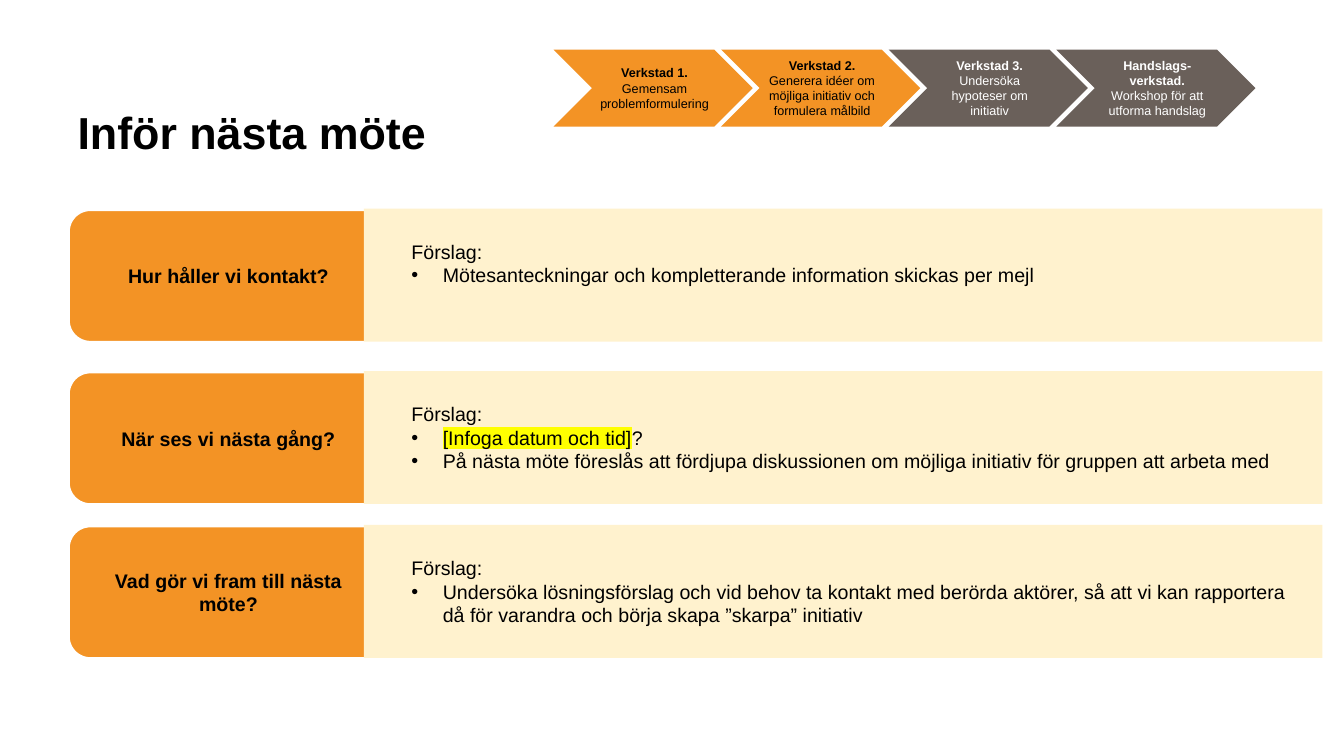
"""Build the slide that prepares the group for its next meeting."""
from dataclasses import dataclass

from lxml import etree
from pptx import Presentation
from pptx import util as u
from pptx.dml.color import RGBColor
from pptx.enum import shapes, text
from pptx.oxml import ns


@dataclass(frozen=True)
class Theme:
    """Colours, font and type sizes of the slide."""
    font: str = "Arial"
    orange: str = "F39325"
    grey: str = "6A605A"
    cream: str = "FFF2CE"
    black: str = "000000"
    white: str = "FFFFFF"
    marker: str = "FFFF00"
    title: int = 32
    body: int = 14
    step: int = 9


THEME = Theme()
STEPS = [
    ("Verkstad 1. ", "Gemensam problemformulering", True),
    ("Verkstad 2. ", "Generera idéer om möjliga initiativ och formulera målbild", True),
    ("Verkstad 3. ", "Undersöka hypoteser om initiativ", False),
    ("Handslags-verkstad. ", "Workshop för att utforma handslag", False),
]
ROWS = [
    (5.26, "Hur håller vi kontakt?", 0.72,
     [[("Mötesanteckningar och kompletterande information skickas per mejl", False)]]),
    (9.35, "När ses vi nästa gång?", 0.13,
     [[("[Infoga datum och tid]", True), ("?", False)],
      [("På nästa möte föreslås att fördjupa diskussionen om möjliga initiativ "
        "för gruppen att arbeta med", False)]]),
    (13.23, "Vad gör vi fram till nästa möte?", 0.13,
     [[("Undersöka lösningsförslag och vid behov ta kontakt med berörda aktörer, "
        "så att vi kan rapportera då för varandra och börja skapa ”skarpa” initiativ",
        False)]]),
]


def set_font(paragraph, size, color=THEME.black, bold=False):
    """Give a whole paragraph its font."""
    font = paragraph.font
    font.name, font.size, font.bold = THEME.font, u.Pt(size), bold
    font.color.rgb = RGBColor.from_string(color)


def add_block(slide, preset, box, fill, line=None, line_width=0):
    """Add a flat filled shape with middle-anchored, wrapping text."""
    block = slide.shapes.add_shape(preset, *(u.Cm(length) for length in box))
    block.shadow.inherit = False
    block.fill.solid()
    block.fill.fore_color.rgb = RGBColor.from_string(fill)
    if line:
        block.line.color.rgb = RGBColor.from_string(line)
        block.line.width = u.Pt(line_width)
    else:
        block.line.fill.background()
    block.text_frame.word_wrap = True
    block.text_frame.vertical_anchor = text.MSO_ANCHOR.MIDDLE
    return block


def set_bullet(paragraph):
    """Give a paragraph a hanging round bullet."""
    properties = paragraph._p.get_or_add_pPr()
    properties.set("marL", str(u.Cm(0.79)))
    properties.set("indent", str(u.Cm(-0.79)))
    etree.SubElement(properties, ns.qn("a:buFont"), typeface=THEME.font)
    etree.SubElement(properties, ns.qn("a:buChar"), char="•")


def mark(run):
    """Highlight a run with the marker colour."""
    highlight = etree.SubElement(run.font._element, ns.qn("a:highlight"))
    etree.SubElement(highlight, ns.qn("a:srgbClr"), val=THEME.marker)


def add_title(slide, box, wording):
    """Place and format the title placeholder."""
    title = slide.shapes.title
    title.left, title.top, title.width, title.height = (u.Cm(length) for length in box)
    frame = title.text_frame
    frame.text = wording
    frame.auto_size = text.MSO_AUTO_SIZE.NONE
    frame.vertical_anchor = text.MSO_ANCHOR.BOTTOM
    heading = frame.paragraphs[0]
    heading.alignment = text.PP_ALIGN.LEFT
    heading.line_spacing = 0.95
    set_font(heading, THEME.title, bold=True)


def add_process(slide, box, steps):
    """Fill the box with overlapping chevrons, one for each workshop."""
    left, top, width, height = box
    chevron_width = 4.75
    pitch = (width - chevron_width) / (len(steps) - 1)
    for index, (name, task, reached) in enumerate(steps):
        fill = THEME.orange if reached else THEME.grey
        chevron = add_block(slide, shapes.MSO_SHAPE.CHEVRON,
                            (left + index * pitch, top, chevron_width, height),
                            fill, fill, 4)
        etree.SubElement(chevron.line._get_or_add_ln(), ns.qn("a:miter"), lim="800000")
        frame = chevron.text_frame
        frame.margin_left = frame.margin_right = u.Cm(0.1)
        caption = frame.paragraphs[0]
        caption.alignment = text.PP_ALIGN.CENTER
        set_font(caption, THEME.step, THEME.black if reached else THEME.white)
        name_run = caption.add_run()
        name_run.text = name
        name_run.font.bold = True
        caption.add_run().text = task


def add_question(slide, box, question, bottom_margin, proposals):
    """Place a question label with its panel of proposals in the box."""
    left, top, width, height = box
    label_width, panel_offset = 8.08, 7.45
    label = add_block(slide, shapes.MSO_SHAPE.ROUNDED_RECTANGLE,
                      (left, top + 0.02, label_width, height),
                      THEME.orange, THEME.white, 2.25)
    label.text_frame.text = question
    wording = label.text_frame.paragraphs[0]
    wording.alignment = text.PP_ALIGN.CENTER
    set_font(wording, THEME.body, bold=True)

    panel = add_block(slide, shapes.MSO_SHAPE.RECTANGLE,
                      (left + panel_offset, top, width - panel_offset, height),
                      THEME.cream)
    frame = panel.text_frame
    frame.margin_left, frame.margin_bottom = u.Cm(1.2), u.Cm(bottom_margin)
    frame.text = "Förslag:"
    intro = frame.paragraphs[0]
    intro.alignment = text.PP_ALIGN.LEFT
    set_font(intro, THEME.body)
    for proposal in proposals:
        item = frame.add_paragraph()
        item.alignment = text.PP_ALIGN.LEFT
        set_bullet(item)
        set_font(item, THEME.body)
        for phrase, marked in proposal:
            run = item.add_run()
            run.text = phrase
            if marked:
                mark(run)


def main():
    """Build and save the slide."""
    deck = Presentation()
    deck.slide_width, deck.slide_height = u.Cm(33.87), u.Cm(19.05)
    slide = deck.slides.add_slide(deck.slide_layouts[5])
    add_title(slide, (1.7, 2.16, 30.73, 1.98), "Inför nästa möte")
    for top, question, bottom_margin, proposals in ROWS:
        add_question(slide, (1.72, top, 31.61, 3.35), question, bottom_margin, proposals)
    add_process(slide, (14.12, 1.32, 17.42, 1.8), STEPS)
    deck.save("out.pptx")


if __name__ == "__main__":
    main()
